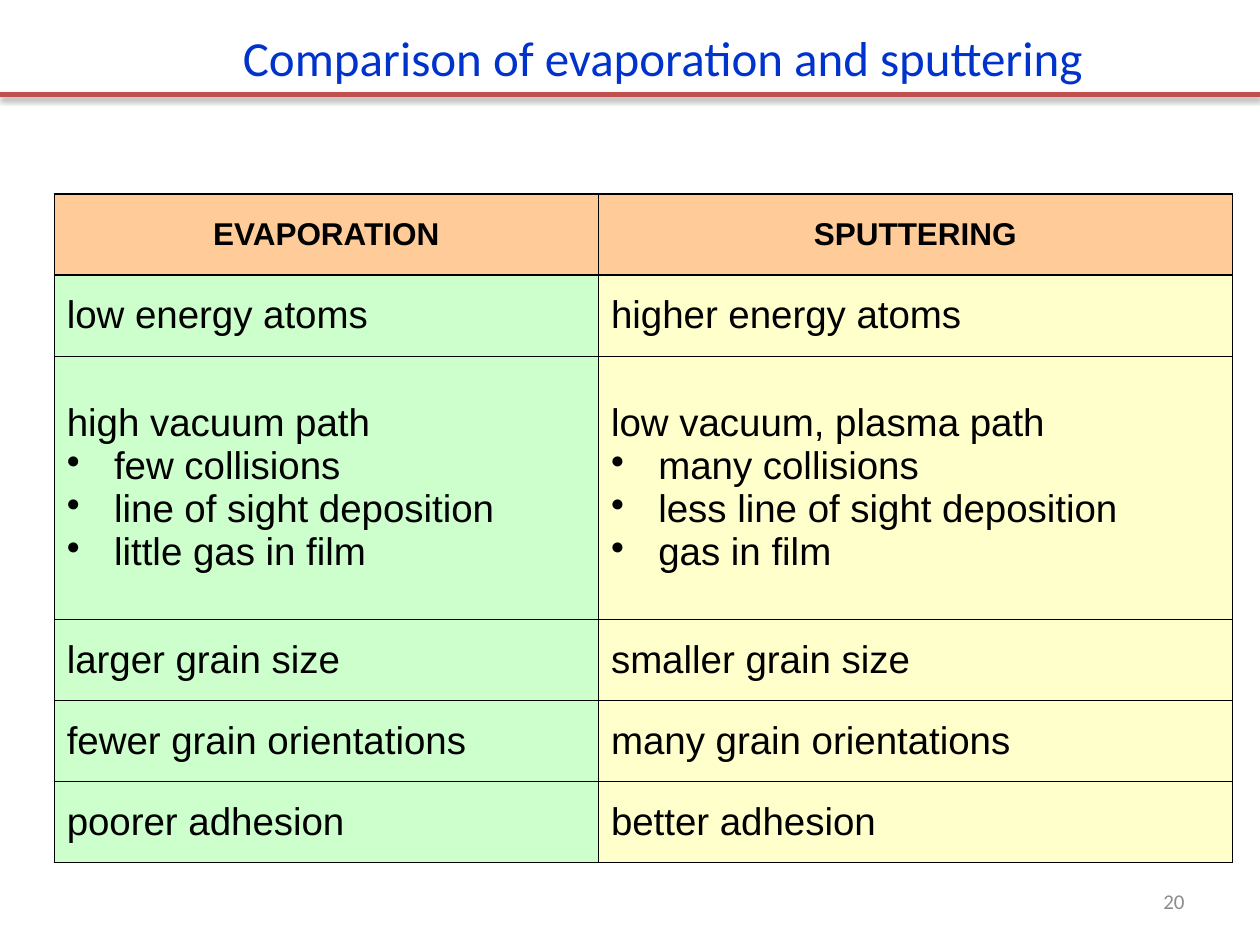
from lxml import etree
from pptx import Presentation
from pptx.dml.color import RGBColor
from pptx.enum.shapes import MSO_CONNECTOR
from pptx.enum.text import MSO_ANCHOR, PP_ALIGN
from pptx.oxml import parse_xml
from pptx.oxml.ns import qn
from pptx.util import Inches, Pt

STRAIGHT = MSO_CONNECTOR.STRAIGHT
TOP, MIDDLE = MSO_ANCHOR.TOP, MSO_ANCHOR.MIDDLE
LEFT, CENTER, RIGHT = PP_ALIGN.LEFT, PP_ALIGN.CENTER, PP_ALIGN.RIGHT
NAMESPACE = "http://schemas.openxmlformats.org/drawingml/2006/main"
GRID_COLUMNS, GRID_ROWS = 100, 75

COLORS = {
    "title": "0033CC",
    "rule": "C0504D",
    "number": "8C8C8C",
    "ink": "000000",
    "header": "FFCC99",
    "evaporation": "CCFFCC",
    "sputtering": "FFFFCC",
}
FORMATS = {
    "title": {"name": "Calibri", "size": Pt(28), "color": "title"},
    "number": {"name": "Calibri", "size": Pt(12), "color": "number"},
    "header": {"name": "Arial", "size": Pt(18), "bold": True, "color": "ink"},
    "body": {"name": "Arial", "size": Pt(22), "bold": False, "color": "ink"},
}
COMPARISON = [
    (["EVAPORATION"], ["SPUTTERING"]),
    (["low energy atoms"], ["higher energy atoms"]),
    (
        ["high vacuum path", "few collisions", "line of sight deposition", "little gas in film"],
        ["low vacuum, plasma path", "many collisions", "less line of sight deposition", "gas in film"],
    ),
    (["larger grain size"], ["smaller grain size"]),
    (["fewer grain orientations"], ["many grain orientations"]),
    (["poorer adhesion"], ["better adhesion"]),
]


class SlideBuilder:
    def __init__(self, presentation):
        self.width = presentation.slide_width
        self.height = presentation.slide_height
        self.slide = presentation.slides.add_slide(presentation.slide_layouts[6])

    def across(self, columns):
        return round(self.width * columns / GRID_COLUMNS)

    def down(self, rows):
        return round(self.height * rows / GRID_ROWS)

    def box(self, left, top, width, height):
        return self.across(left), self.down(top), self.across(width), self.down(height)

    def fill_paragraph(self, paragraph, text, style, alignment):
        paragraph.alignment = alignment
        run = paragraph.add_run()
        run.text = text
        for attribute, value in FORMATS[style].items():
            if attribute == "color":
                run.font.color.rgb = RGBColor.from_string(COLORS[value])
            else:
                setattr(run.font, attribute, value)

    def text(self, place, text, style, alignment, anchor, wrap):
        frame = self.slide.shapes.add_textbox(*self.box(*place)).text_frame
        frame.word_wrap = wrap
        frame.vertical_anchor = anchor
        self.fill_paragraph(frame.paragraphs[0], text, style, alignment)

    def rule(self, row, color, weight):
        height = self.down(row)
        connector = self.slide.shapes.add_connector(STRAIGHT, 0, height, self.width, height)
        connector.line.color.rgb = RGBColor.from_string(COLORS[color])
        connector.line.width = Pt(weight)
        connector._element.spPr.append(parse_xml(
            f'<a:effectLst xmlns:a="{NAMESPACE}">'
            f'<a:outerShdw blurRad="{Pt(3.1)}" dist="{Pt(1.6)}" dir="5400000" rotWithShape="0">'
            f'<a:srgbClr val="{COLORS["ink"]}"><a:alpha val="38000"/></a:srgbClr>'
            '</a:outerShdw></a:effectLst>'
        ))

    def cell(self, cell, lines, fill, style, alignment):
        cell.fill.solid()
        cell.fill.fore_color.rgb = RGBColor.from_string(COLORS[fill])
        cell.vertical_anchor = MIDDLE
        for position, line in enumerate(lines):
            frame = cell.text_frame
            paragraph = frame.add_paragraph() if position else frame.paragraphs[0]
            self.fill_paragraph(paragraph, line, style, alignment)
            properties = paragraph._p.get_or_add_pPr()
            indent = self.across(3.75)
            properties.set("marL", str(indent))
            properties.set("indent", str(-indent))
            if position:
                etree.SubElement(properties, qn("a:buChar")).set("char", "•")
            else:
                etree.SubElement(properties, qn("a:buNone"))
        cell_properties = cell._tc.get_or_add_tcPr()
        for position, side in enumerate("LRTB"):
            cell_properties.insert(position, parse_xml(
                f'<a:ln{side} xmlns:a="{NAMESPACE}" w="{Pt(0.75)}"><a:solidFill>'
                f'<a:srgbClr val="{COLORS["ink"]}"/></a:solidFill></a:ln{side}>'
            ))

    def table(self, left, top, widths, heights, content):
        place = self.box(left, top, sum(widths), sum(heights))
        table = self.slide.shapes.add_table(len(heights), len(widths), *place).table
        for column, width in zip(table.columns, widths):
            column.width = self.across(width)
        for row, height in zip(table.rows, heights):
            row.height = self.down(height)
        for row_index, row in enumerate(content):
            for column_index, lines in enumerate(row):
                if row_index == 0:
                    look = "header", "header", CENTER
                else:
                    look = ("evaporation", "sputtering")[column_index], "body", LEFT
                self.cell(table.cell(row_index, column_index), lines, *look)


def main():
    presentation = Presentation()
    presentation.slide_width = Inches(10)
    presentation.slide_height = Inches(7.5)
    builder = SlideBuilder(presentation)
    builder.text((71.7, 69.5, 23.3, 4), "20", "number", RIGHT, MIDDLE, True)
    heights = [20.9 if len(row[0]) > 1 else 6.43 for row in COMPARISON]
    builder.table(4.3, 15.4, [43.2, 50.3], heights, COMPARISON)
    builder.rule(7.5, "rule", 3)
    builder.text((18.3, 1.7, 69.7, 5.7), "Comparison of evaporation and sputtering",
                 "title", LEFT, TOP, False)
    presentation.save("out.pptx")


if __name__ == "__main__":
    main()
